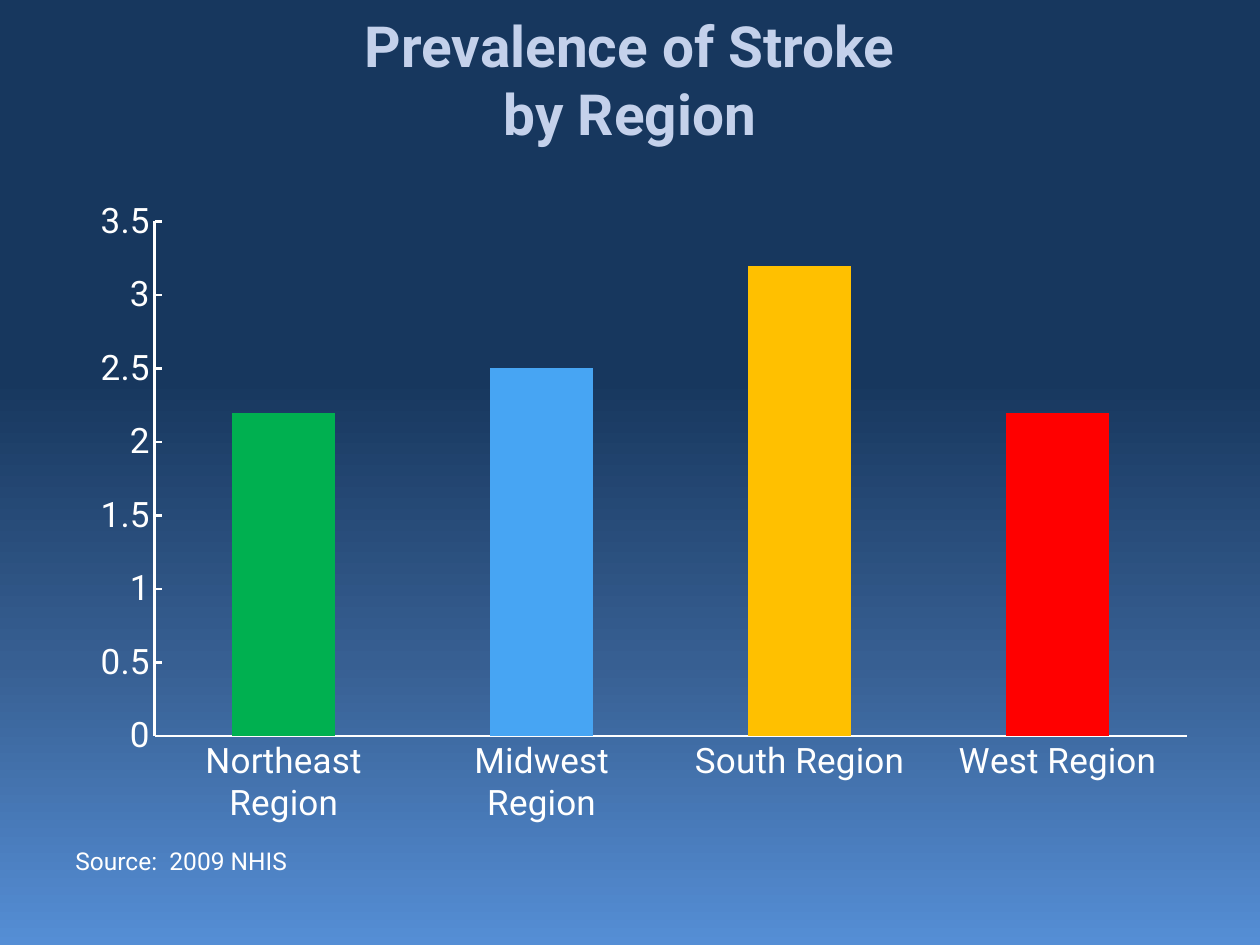
from copy import deepcopy
from dataclasses import dataclass

from lxml.etree import SubElement
from pptx import Presentation
from pptx.chart.data import CategoryChartData
from pptx.dml.color import RGBColor
from pptx.enum.chart import XL_CHART_TYPE, XL_TICK_MARK
from pptx.enum.text import MSO_ANCHOR, PP_ALIGN
from pptx.oxml.ns import qn
from pptx.util import Cm, Pt


@dataclass(frozen=True)
class Theme:
    font: str = "Roboto"
    title_size: float = 32.4
    axis_size: float = 20
    source_size: float = 14
    axis_width: float = 1.5
    title_color: str = "C4D1EB"
    text_color: str = "FFFFFF"
    bar_colors: tuple = ("00B050", "47A5F3", "FFC000", "FF0000")
    background: tuple = ((0, "17375E"), (0.4, "17375E"), (0.7, "375F92"), (1, "558ED5"))


THEME = Theme()
PREVALENCE = {
    "Northeast Region": 2.2,
    "Midwest Region": 2.5,
    "South Region": 3.2,
    "West Region": 2.2,
}


def set_font(font, size, color, bold=False):
    font.name = THEME.font
    font.size = Pt(size)
    font.bold = bold
    font.color.rgb = RGBColor.from_string(color)


def paint_background(slide):
    fill = slide.background.fill
    fill.gradient()
    fill.gradient_angle = 270  # counter-clockwise: top to bottom
    # The default gradient has two stops; add the missing ones
    stop_list = next(slide.element.iter(qn("a:gsLst")))
    while len(stop_list) < len(THEME.background):
        stop_list.append(deepcopy(stop_list[0]))
    for stop, (position, color) in zip(fill.gradient_stops, THEME.background):
        stop.position = position
        stop.color.rgb = RGBColor.from_string(color)


def add_text(slide, text, box, size, color, bold=False,
             align=PP_ALIGN.LEFT, anchor=MSO_ANCHOR.TOP):
    shape = slide.shapes.add_textbox(*map(Cm, box))
    frame = shape.text_frame
    frame.word_wrap = True
    frame.vertical_anchor = anchor
    paragraph = frame.paragraphs[0]
    paragraph.text = text
    paragraph.alignment = align
    set_font(paragraph.font, size, color, bold)


def style_axis(axis, tick_mark):
    axis.has_major_gridlines = False
    axis.major_tick_mark = tick_mark
    axis.minor_tick_mark = XL_TICK_MARK.NONE
    axis.format.line.color.rgb = RGBColor.from_string(THEME.text_color)
    axis.format.line.width = Pt(THEME.axis_width)
    set_font(axis.tick_labels.font, THEME.axis_size, THEME.text_color)


def place_plot(chart, **fractions):
    """Fix the inner plot area as fractions of the chart frame."""
    plot_area = next(chart.element.iter(qn("c:plotArea")))
    for old_layout in plot_area.findall(qn("c:layout")):
        plot_area.remove(old_layout)
    layout = plot_area.makeelement(qn("c:layout"))
    plot_area.insert(0, layout)
    manual = SubElement(layout, qn("c:manualLayout"))
    settings = {"layoutTarget": "inner", "xMode": "edge", "yMode": "edge", **fractions}
    for name, value in settings.items():
        SubElement(manual, qn(f"c:{name}")).set("val", str(value))


def add_region_chart(slide, box):
    data = CategoryChartData()
    data.categories = list(PREVALENCE)
    data.add_series("Series 1", list(PREVALENCE.values()))
    chart = slide.shapes.add_chart(
        XL_CHART_TYPE.COLUMN_CLUSTERED, *map(Cm, box), data).chart
    chart.has_legend = False
    chart.has_title = False
    set_font(chart.font, THEME.axis_size, THEME.text_color)

    # Axes
    style_axis(chart.category_axis, XL_TICK_MARK.NONE)
    style_axis(chart.value_axis, XL_TICK_MARK.INSIDE)
    chart.value_axis.minimum_scale = 0
    chart.value_axis.maximum_scale = 3.5
    chart.value_axis.major_unit = 0.5

    # Bars, one colour per region
    plot = chart.plots[0]
    plot.gap_width = 150
    plot.vary_by_categories = False
    for index, color in enumerate(THEME.bar_colors):
        fill = plot.series[0].points[index].format.fill
        fill.solid()
        fill.fore_color.rgb = RGBColor.from_string(color)
    place_plot(chart, x=0.07, y=0.05, w=0.91, h=0.79)


def main():
    presentation = Presentation()
    presentation.slide_width = Cm(25.4)
    presentation.slide_height = Cm(19.05)
    slide = presentation.slides.add_slide(presentation.slide_layouts[6])
    paint_background(slide)

    # Title
    add_text(slide, "Prevalence of Stroke\vby Region", (1.27, 0, 22.86, 3.18),
             THEME.title_size, THEME.title_color, bold=True,
             align=PP_ALIGN.CENTER, anchor=MSO_ANCHOR.MIDDLE)
    # Source note
    add_text(slide, "Source:  2009 NHIS", (1.27, 16.94, 22.86, 0.64),
             THEME.source_size, THEME.text_color)
    # Chart
    add_region_chart(slide, (1.52, 3.81, 22.86, 13.13))

    presentation.save("out.pptx")


if __name__ == "__main__":
    main()
